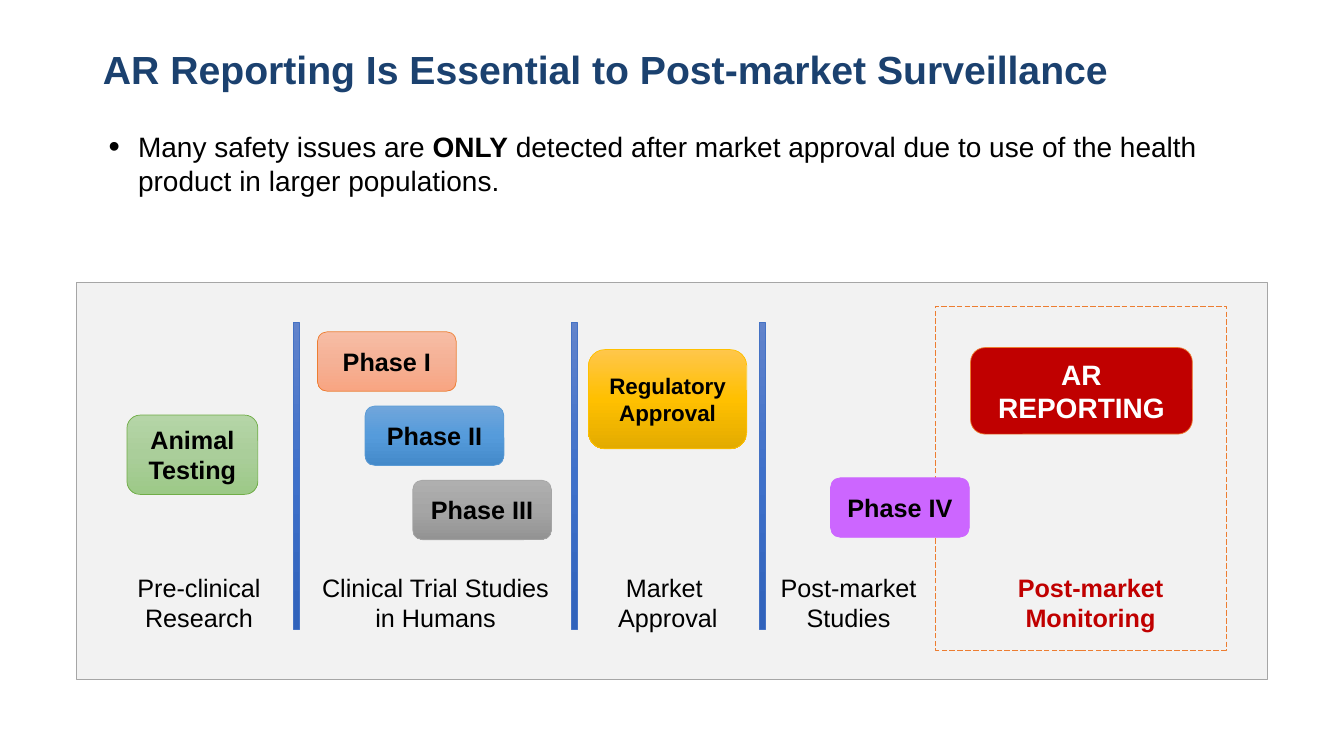
from copy import deepcopy
from lxml.etree import SubElement
from pptx import Presentation
from pptx.dml.color import RGBColor
from pptx.enum.dml import MSO_LINE
from pptx.enum.shapes import MSO_SHAPE
from pptx.enum.text import MSO_ANCHOR, PP_ALIGN
from pptx.oxml.ns import qn
from pptx.util import Cm, Pt

HUES = {
    "navy": "1B416F", "black": "000000", "white": "FFFFFF", "red": "C00000",
    "panel": "F2F2F2", "edge": "A6A6A6", "orange": "ED7D31", "purple": "CC66FF",
    "green": "70AD47", "sky": "5B9BD5", "grey": "A5A5A5", "gold": "FFC000",
    "blue": "4472C4",
}
FADES = {
    "green": ("B5D5A7", "AACE9A", "9CC987"),
    "orange": ("F7BDA5", "F5B196", "F8A582"),
    "sky": ("71A6DB", "559BDB", "448ACA"),
    "grey": ("AFAFAF", "A5A5A5", "939393"),
    "gold": ("FFC64B", "FFC000", "E3AB00"),
    "blue": ("6183CB", "3E70CA", "3062BB"),
}


def hue(name):
    return RGBColor.from_string(HUES[name])


def write(frame, text, size=18, color="black", bold=False,
          align=PP_ALIGN.CENTER, anchor=MSO_ANCHOR.TOP):
    frame.word_wrap = True
    frame.vertical_anchor = anchor
    for row, line in enumerate(text.split("\n")):
        para = frame.add_paragraph() if row else frame.paragraphs[0]
        para.alignment = align
        for turn, part in enumerate(line.split("**")):
            run = para.add_run()
            run.text = part
            font = run.font
            font.name, font.size = "Arial", Pt(size)
            font.bold = bold or turn % 2 == 1
            font.color.rgb = hue(color)


def place(box, left, top, width, height):
    return Cm(box[0] + left), Cm(box[1] + top), Cm(width), Cm(height)


def fade(shape, colors):
    fill = shape.fill
    fill.gradient()
    fill.gradient_angle = 270
    first = shape.element.spPr.find(".//" + qn("a:gs"))
    first.addnext(deepcopy(first))
    for step, (stop, color) in enumerate(zip(fill.gradient_stops, colors)):
        stop.position = step / 2
        stop.color.rgb = RGBColor.from_string(color)


def block(slide, spot, kind=MSO_SHAPE.RECTANGLE, fill=None, blend=None, edge=None):
    shape = slide.shapes.add_shape(kind, *spot)
    shape.shadow.inherit = False
    if blend:
        fade(shape, FADES[blend])
    elif fill:
        shape.fill.solid()
        shape.fill.fore_color.rgb = hue(fill)
    else:
        shape.fill.background()
    shape.line.color.rgb = hue(edge or blend or fill)
    shape.line.width = Pt(0.5)
    return shape


def card(slide, spot, text, size=18, color="black", **look):
    shape = block(slide, spot, MSO_SHAPE.ROUNDED_RECTANGLE, **look)
    write(shape.text_frame, text, size=size, color=color, bold=True,
          anchor=MSO_ANCHOR.MIDDLE)


def label(slide, spot, text, **look):
    write(slide.shapes.add_textbox(*spot).text_frame, text, **look)


def head(slide, box):
    title = slide.shapes.title
    title.left, title.top, title.width, title.height = place(box, 0, 0, *box[2:])
    write(title.text_frame, "AR Reporting Is Essential to Post-market Surveillance",
          size=28, color="navy", bold=True, align=PP_ALIGN.LEFT)


def point(slide, box):
    frame = slide.shapes.add_textbox(*place(box, 0, 0, *box[2:])).text_frame
    write(frame, "Many safety issues are **ONLY** detected after market approval "
          "due to use of the health product in larger populations.",
          size=20, align=PP_ALIGN.LEFT)
    para = frame.paragraphs[0]
    para.space_before = Pt(6)
    props = para._p.get_or_add_pPr()
    props.set("marL", str(Cm(0.74)))
    props.set("indent", str(-Cm(0.74)))
    SubElement(props, qn("a:buSzPct"), val="115000")
    SubElement(props, qn("a:buFont"), typeface="Arial")
    SubElement(props, qn("a:buChar"), char="•")


def chain(slide, box):
    block(slide, place(box, 0, 0, *box[2:]), fill="panel", edge="edge")

    for left in (5.46, 12.47, 17.22):
        block(slide, place(box, left, 1.02, 0.15, 7.72), blend="blue")

    frame = block(slide, place(box, 21.64, 0.61, 7.34, 8.66), edge="orange")
    frame.line.dash_style = MSO_LINE.LONG_DASH

    card(slide, place(box, 1.27, 3.35, 3.3, 2), "Animal Testing", blend="green")
    trials = (("Phase I", "orange"), ("Phase II", "sky"), ("Phase III", "grey"))
    for step, (text, blend) in enumerate(trials):
        spot = place(box, 6.07 + 1.2 * step, 1.25 + 1.87 * step, 3.5, 1.5)
        card(slide, spot, text, blend=blend)
    card(slide, place(box, 12.9, 1.7, 3.99, 2.5), "Regulatory Approval",
         size=16, blend="gold")
    card(slide, place(box, 19, 4.93, 3.5, 1.5), "Phase IV", fill="purple")
    card(slide, place(box, 22.53, 1.65, 5.59, 2.18), "AR REPORTING",
         size=20, color="white", fill="red", edge="orange")

    stages = (
        (0.56, 5.05, "Pre-clinical Research", {}),
        (5.64, 6.81, "Clinical Trial Studies in Humans", {}),
        (12.5, 4.8, "Market \nApproval", {}),
        (16.79, 5.33, "Post-market Studies", {}),
        (22.71, 5.69, "Post-market Monitoring", {"color": "red", "bold": True}),
    )
    for left, width, text, look in stages:
        label(slide, place(box, left, 7.18, width, 1.8), text, **look)


def main():
    deck = Presentation()
    deck.slide_width, deck.slide_height = Cm(33.87), Cm(19.05)
    slide = deck.slides.add_slide(deck.slide_layouts[5])
    head(slide, (2.34, 1.02, 29.2, 3.68))
    point(slide, (2.49, 3.15, 29.2, 3.43))
    chain(slide, (1.93, 7.11, 30, 10))
    deck.save("out.pptx")


if __name__ == "__main__":
    main()
